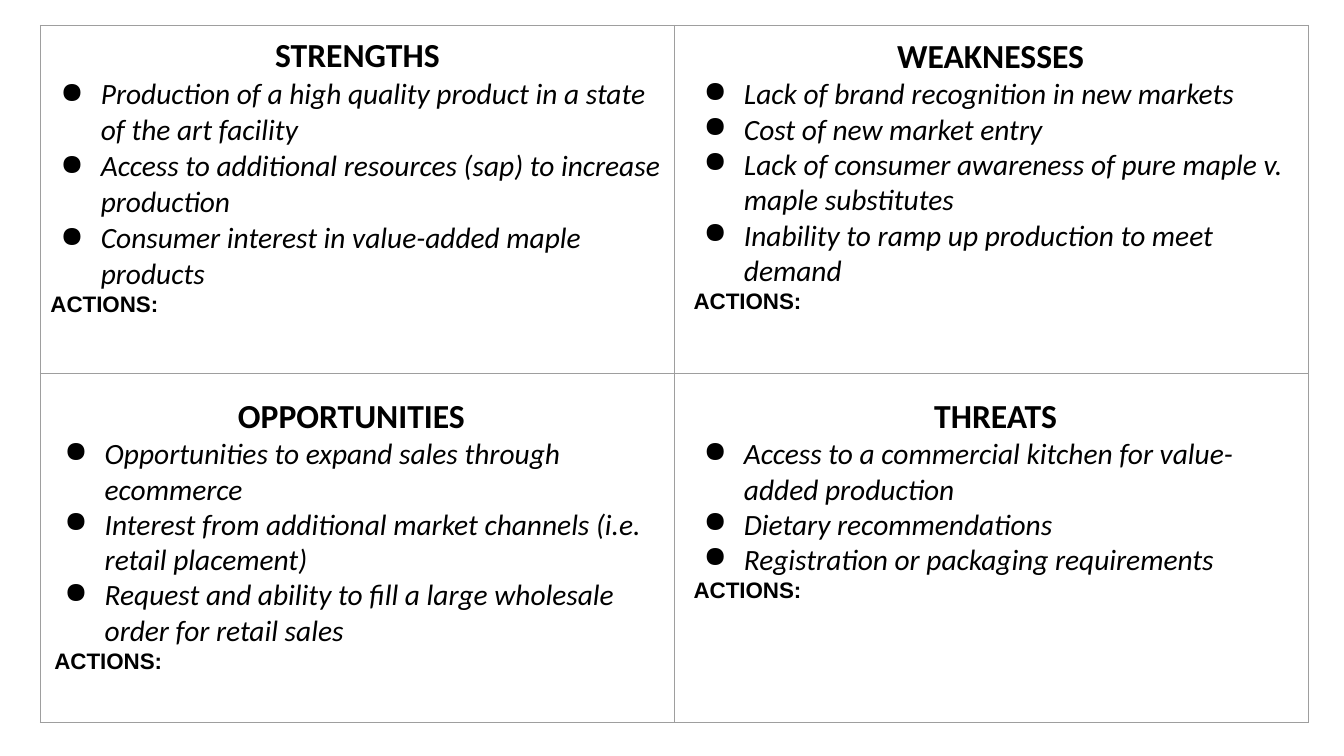
from lxml import etree
from pptx import Presentation, util as u
from pptx.dml.color import RGBColor
from pptx.enum import text as t
from pptx.oxml import ns

HUES = {"ink": "000000", "rule": "9E9E9E"}
PAD = u.Inches(0.1)

deck = Presentation()
deck.slide_width, deck.slide_height = u.Inches(13.33), u.Inches(7.5)
slide = deck.slides.add_slide(deck.slide_layouts[6])


def write(frame, words, size, font="Calibri", bold=False, italic=False,
          align=t.PP_ALIGN.LEFT, bullet=False):
    """Add one paragraph, using the empty first one if there is one."""
    para = frame.paragraphs[0]
    if para.runs:
        para = frame.add_paragraph()
    para.alignment = align
    run = para.add_run()
    run.text = words
    run.font.size, run.font.name = u.Pt(size), font
    run.font.bold, run.font.italic = bold, italic
    run.font.color.rgb = RGBColor.from_string(HUES["ink"])
    if bullet:
        props = para._p.get_or_add_pPr()
        props.set("marL", str(u.Inches(0.5)))
        props.set("indent", str(u.Inches(-0.4)))
        hue = etree.SubElement(props, ns.qn("a:buClr"))
        etree.SubElement(hue, ns.qn("a:srgbClr"), val=HUES["ink"])
        etree.SubElement(props, ns.qn("a:buChar"), char="●")


def fill_part(frame, title, points):
    """Write a heading, its bullets and the actions line."""
    write(frame, title, 24, bold=True, align=t.PP_ALIGN.CENTER)
    for point in points:
        write(frame, point, 21, italic=True, bullet=True)
    write(frame, "ACTIONS:", 16, font="Arial", bold=True)


# Two by two grid
grid = slide.shapes.add_table(2, 2, u.Inches(0.4), u.Inches(0.25),
                              u.Inches(12.58), u.Inches(6.92)).table
grid.first_row = grid.horz_banding = False
for cell in grid.iter_cells():
    cell.fill.background()
    cell.margin_left = cell.margin_right = PAD
    cell.margin_top = cell.margin_bottom = PAD
    props = cell._tc.get_or_add_tcPr()
    for spot, side in enumerate(("lnL", "lnR", "lnT", "lnB")):
        line = etree.Element(ns.qn("a:" + side), w=str(u.Pt(0.75)))
        solid = etree.SubElement(line, ns.qn("a:solidFill"))
        etree.SubElement(solid, ns.qn("a:srgbClr"), val=HUES["rule"])
        props.insert(spot, line)

# Strengths sit in the first cell
fill_part(grid.cell(0, 0).text_frame, "STRENGTHS", [
    "Production of a high quality product in a state of the art facility",
    "Access to additional resources (sap) to increase production",
    "Consumer interest in value-added maple products"])

# The other three parts are text boxes over the grid
PARTS = [
    ("THREATS", (6.78, 3.82, 6.19, 2.29), [
        "Access to a commercial kitchen for value-added production",
        "Dietary recommendations",
        "Registration or packaging requirements"]),
    ("OPPORTUNITIES", (0.44, 3.82, 6.09, 3), [
        "Opportunities to expand sales through ecommerce",
        "Interest from additional market channels (i.e. retail placement)",
        "Request and ability to fill a large wholesale order for retail sales"]),
    ("WEAKNESSES", (6.78, 0.25, 6.09, 3), [
        "Lack of brand recognition in new markets",
        "Cost of new market entry",
        "Lack of consumer awareness of pure maple v. maple substitutes",
        "Inability to ramp up production to meet demand"]),
]
for title, place, points in PARTS:
    frame = slide.shapes.add_textbox(*map(u.Inches, place)).text_frame
    frame.word_wrap = True
    frame.auto_size = t.MSO_AUTO_SIZE.SHAPE_TO_FIT_TEXT
    frame.margin_left = frame.margin_right = PAD
    frame.margin_top = frame.margin_bottom = PAD
    fill_part(frame, title, points)

deck.save("out.pptx")
